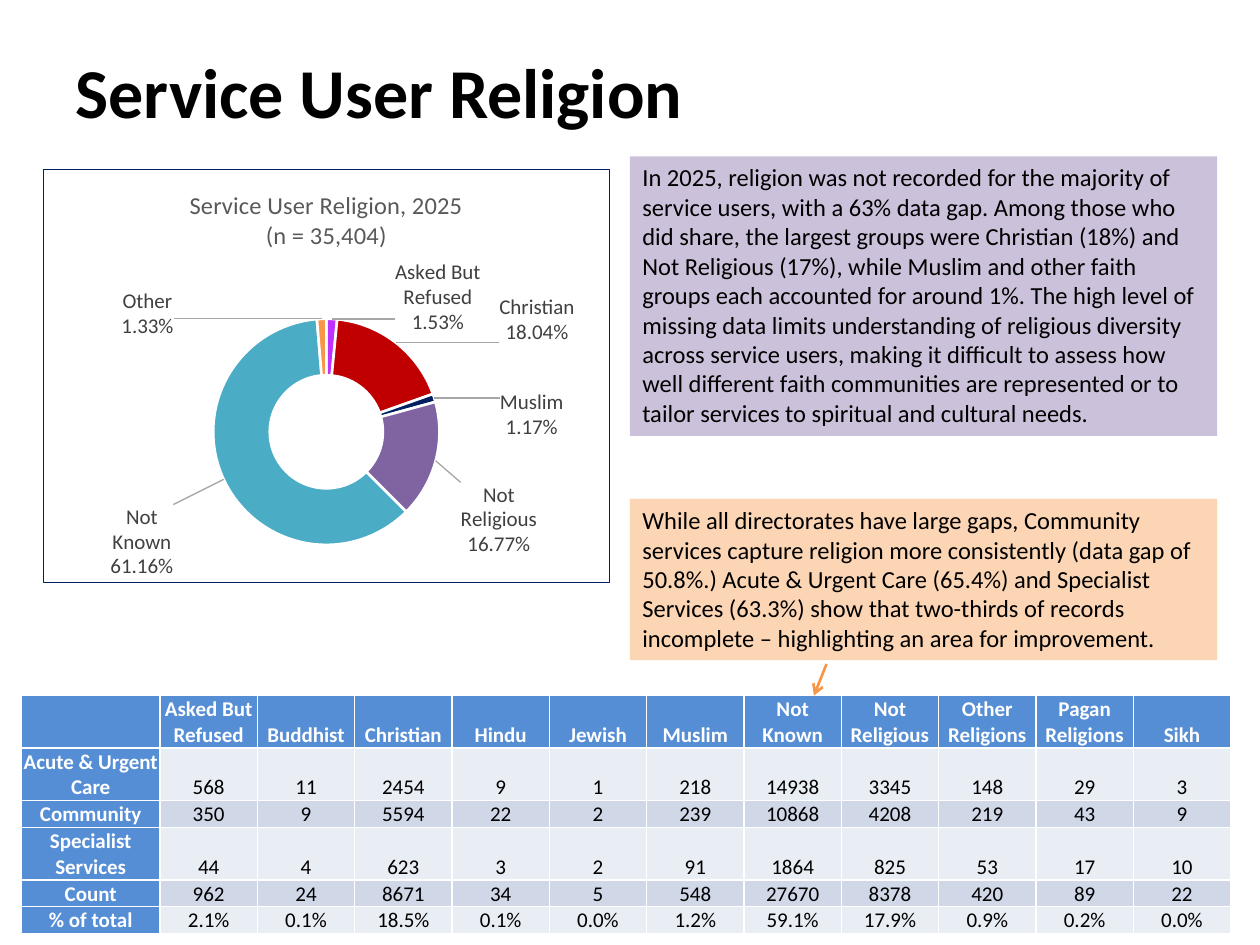
from lxml import etree
from pptx import Presentation
from pptx import util as u
from pptx.chart.data import CategoryChartData
from pptx.dml.color import RGBColor
from pptx.enum import chart as charts, shapes, text
from pptx.oxml import parse_xml
from pptx.oxml.ns import nsdecls, qn

Inches = u.Inches
COLORS = {
    "black": "000000", "white": "FFFFFF", "chart_title": "595959", "label": "404040",
    "navy": "002060", "header": "558ED5", "light": "E9EDF4", "dark": "D0D8E8",
    "lilac": "CCC1DA", "peach": "FCD5B5", "orange": "F79646", "leader": "A6A6A6",
    "magenta": "BF31FF", "red": "C00000", "purple": "8064A2", "teal": "4BACC6",
}


def color(name):
    return RGBColor.from_string(COLORS[name])


def style(font, size, name, bold=False):
    font.name = "Calibri"
    font.size = u.Pt(size)
    font.bold = bold
    font.color.rgb = color(name)


presentation = Presentation()
presentation.slide_width = Inches(10)
presentation.slide_height = Inches(7.5)
slide = presentation.slides.add_slide(presentation.slide_layouts[5])

title = slide.shapes.title
title.left, title.top, title.width, title.height = [Inches(n) for n in (0.5, 0.09, 5.52, 1.25)]
title.text_frame.text = "Service User Religion"
title.text_frame.vertical_anchor = text.MSO_ANCHOR.MIDDLE
title.text_frame.paragraphs[0].alignment = text.PP_ALIGN.LEFT
style(title.text_frame.paragraphs[0].runs[0].font, 40, "black", True)

headings = ["", "Asked But Refused", "Buddhist", "Christian", "Hindu", "Jewish", "Muslim",
            "Not Known", "Not Religious", "Other Religions", "Pagan Religions", "Sikh"]
rows = [
    headings,
    ["Acute & Urgent Care", 568, 11, 2454, 9, 1, 218, 14938, 3345, 148, 29, 3],
    ["Community", 350, 9, 5594, 22, 2, 239, 10868, 4208, 219, 43, 9],
    ["Specialist Services", 44, 4, 623, 3, 2, 91, 1864, 825, 53, 17, 10],
    ["Count", 962, 24, 8671, 34, 5, 548, 27670, 8378, 420, 89, 22],
    ["% of total", "2.1%", "0.1%", "18.5%", "0.1%", "0.0%", "1.2%", "59.1%", "17.9%",
     "0.9%", "0.2%", "0.0%"],
]
table = slide.shapes.add_table(len(rows), len(headings), Inches(0.17), Inches(5.52),
                               Inches(9.6), Inches(0.99)).table
for index, column in enumerate(table.columns):
    column.width = Inches(1.1) if index == 0 else Inches(8.5 / 11)
for row_index, row in enumerate(rows):
    table.rows[row_index].height = Inches(0.29 if row_index == 0 else 0.14)
    for column_index, value in enumerate(row):
        cell = table.cell(row_index, column_index)
        heading = row_index == 0 or column_index == 0
        cell.margin_left = cell.margin_right = cell.margin_top = Inches(0.01)
        cell.margin_bottom = 0
        cell.vertical_anchor = text.MSO_ANCHOR.BOTTOM
        cell.fill.solid()
        band = "light" if row_index % 2 else "dark"
        cell.fill.fore_color.rgb = color("header" if heading else band)
        paragraph = cell.text_frame.paragraphs[0]
        paragraph.text = str(value)
        paragraph.alignment = text.PP_ALIGN.CENTER
        for font in [run.font for run in paragraph.runs] or [paragraph.font]:
            style(font, 12, "white" if heading else "black", heading)

slices = [
    ("Asked But Refused", 1.53, "magenta", 0.19, -0.12, 0.17, 0.19),
    ("Christian", 18.04, "red", 0.28, -0.11, 0.17, 0.13),
    ("Muslim", 1.17, "navy", 0.22, 0.02, 0.15, 0.13),
    ("Not Religious", 16.77, "purple", 0.16, 0.16, 0.16, 0.19),
    ("Not Known", 61.16, "teal", -0.19, 0.18, 0.13, 0.19),
    ("Other", 1.33, "orange", -0.31, -0.08, 0.12, 0.13),
]
chart_data = CategoryChartData()
chart_data.categories = [entry[0] for entry in slices]
chart_data.add_series("Series 1", [entry[1] for entry in slices])
chart = slide.shapes.add_chart(charts.XL_CHART_TYPE.DOUGHNUT, Inches(0.34), Inches(1.34),
                               Inches(4.5), Inches(3.29), chart_data).chart
style(chart.font, 12, "black")
chart.has_legend = False
chart.has_title = True
title_frame = chart.chart_title.text_frame
title_frame.text = "Service User Religion, 2025\n(n = 35,404)"
for paragraph in title_frame.paragraphs:
    style(paragraph.runs[0].font, 14, "chart_title")

plot = chart.plots[0]
plot.vary_by_categories = True
plot._element.find(qn("c:holeSize")).set("val", "50")
series = plot.series[0]
labels = series.data_labels
labels.show_value = False
labels.show_category_name = True
labels.show_percentage = True
labels.number_format = "0.00%"
labels.number_format_is_linked = False
style(labels.font, 12, "label")
label_list = series._element.find(qn("c:dLbls"))
text_format = etree.tostring(label_list.find(qn("c:txPr"))).decode()
leader_flag = label_list.find(qn("c:showLeaderLines"))
if leader_flag is not None:
    label_list.remove(leader_flag)
for tag, body in [
    ("separator", "\n"),
    ("showLeaderLines", None),
    ("leaderLines", f'<c:spPr><a:ln w="9525"><a:solidFill><a:srgbClr val="{COLORS["leader"]}"/>'
                    '</a:solidFill></a:ln></c:spPr>'),
]:
    attribute = ' val="1"' if body is None else ""
    label_list.append(parse_xml(f'<c:{tag} {nsdecls("c", "a")}{attribute}>{body or ""}</c:{tag}>'))

for index, (name, value, fill, x, y, width, height) in enumerate(slices):
    point = series.points[index]
    point.format.fill.solid()
    point.format.fill.fore_color.rgb = color(fill)
    point.format.line.color.rgb = color("white")
    point.format.line.width = u.Pt(1.5)
    label_list.insert(index, parse_xml(
        f'<c:dLbl {nsdecls("c", "a")}><c:idx val="{index}"/><c:layout><c:manualLayout>'
        f'<c:x val="{x}"/><c:y val="{y}"/></c:manualLayout></c:layout>'
        f'<c:numFmt formatCode="0.00%" sourceLinked="0"/><c:spPr/>{text_format}'
        '<c:showLegendKey val="0"/><c:showVal val="0"/><c:showCatName val="1"/>'
        '<c:showSerName val="0"/><c:showPercent val="1"/><c:showBubbleSize val="0"/>'
        '<c:separator>\n</c:separator><c:extLst>'
        '<c:ext uri="{CE6537A1-D6FC-4f65-9D91-7224C49458BB}" '
        'xmlns:c15="http://schemas.microsoft.com/office/drawing/2012/chart">'
        f'<c15:layout><c:manualLayout><c:w val="{width}"/><c:h val="{height}"/>'
        '</c:manualLayout></c15:layout></c:ext></c:extLst></c:dLbl>'))

plot_area = chart._chartSpace.chart.plotArea
for layout in plot_area.findall(qn("c:layout")):
    plot_area.remove(layout)
plot_area.insert(0, parse_xml(
    f'<c:layout {nsdecls("c")}><c:manualLayout><c:layoutTarget val="inner"/>'
    '<c:xMode val="edge"/><c:yMode val="edge"/><c:x val="0.3"/><c:y val="0.36"/>'
    '<c:w val="0.4"/><c:h val="0.55"/></c:manualLayout></c:layout>'))
chart._chartSpace.chart.addnext(parse_xml(
    f'<c:spPr {nsdecls("c", "a")}><a:solidFill><a:srgbClr val="{COLORS["white"]}"/></a:solidFill>'
    f'<a:ln w="9525"><a:solidFill><a:srgbClr val="{COLORS["navy"]}"/></a:solidFill></a:ln></c:spPr>'))

notes = [
    (1.24, 2.22, "lilac", "In 2025, religion was not recorded for the majority of service users, "
     "with a 63% data gap. Among those who did share, the largest groups were Christian (18%) and "
     "Not Religious (17%), while Muslim and other faith groups each accounted for around 1%. The "
     "high level of missing data limits understanding of religious diversity across service users, "
     "making it difficult to assess how well different faith communities are represented or to "
     "tailor services to spiritual and cultural needs."),
    (3.96, 1.28, "peach", "While all directorates have large gaps, Community services capture "
     "religion more consistently (data gap of 50.8%.) Acute & Urgent Care (65.4%) and Specialist "
     "Services (63.3%) show that two-thirds of records incomplete – highlighting an area for "
     "improvement."),
]
for top, height, fill, wording in notes:
    note = slide.shapes.add_textbox(Inches(5), Inches(top), Inches(4.66), Inches(height))
    note.fill.solid()
    note.fill.fore_color.rgb = color(fill)
    note.text_frame.word_wrap = True
    note.text_frame.auto_size = text.MSO_AUTO_SIZE.SHAPE_TO_FIT_TEXT
    note.text_frame.text = wording
    style(note.text_frame.paragraphs[0].runs[0].font, 14, "black")

arrow = slide.shapes.add_connector(shapes.MSO_CONNECTOR.STRAIGHT, Inches(6.56), Inches(5.27),
                                   Inches(6.46), Inches(5.52))
arrow.line.color.rgb = color("orange")
arrow.line.width = u.Pt(1.5)
etree.SubElement(arrow.line._get_or_add_ln(), qn("a:tailEnd")).set("type", "arrow")
etree.SubElement(arrow._element.spPr, qn("a:effectLst"))

presentation.save("out.pptx")
